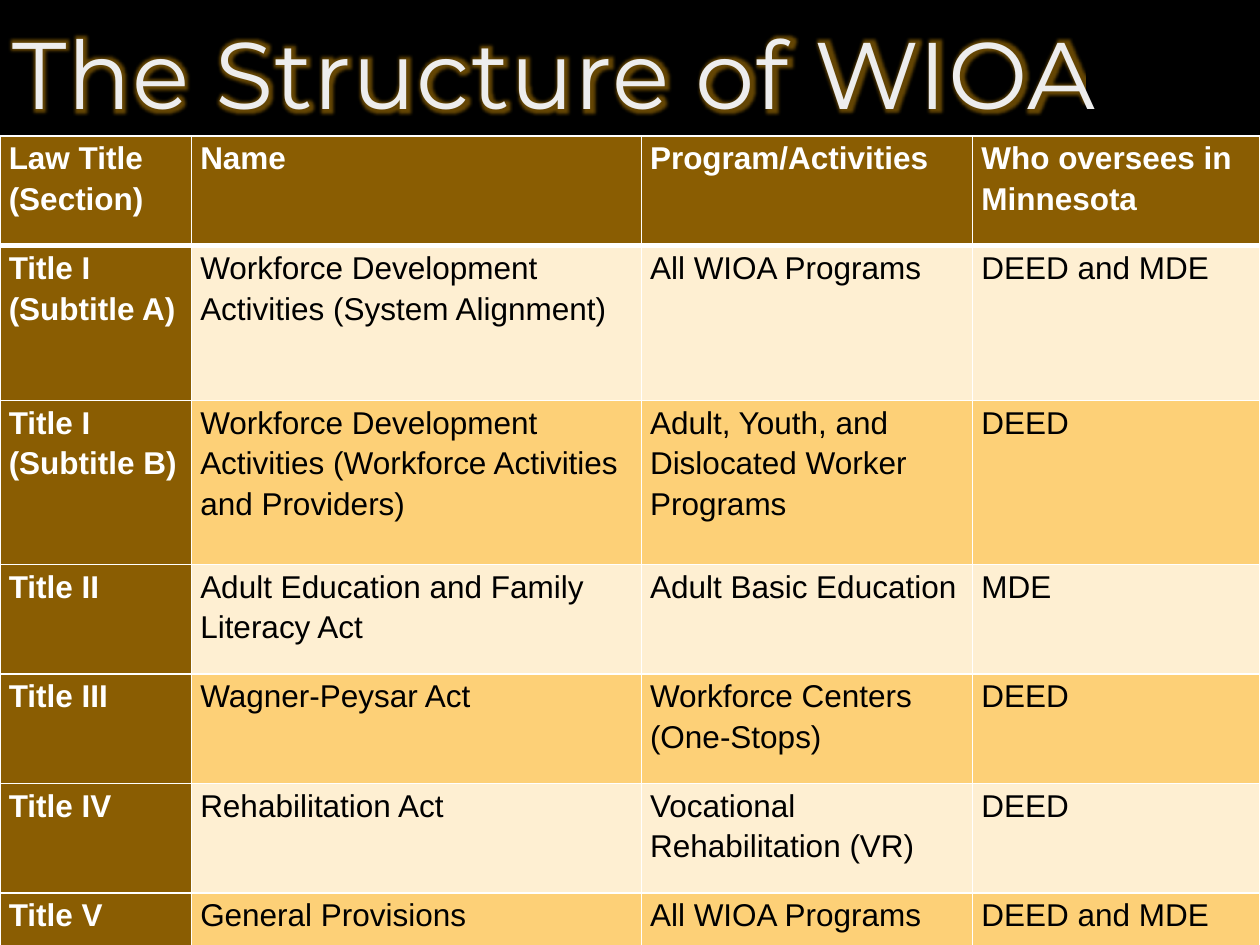
from dataclasses import dataclass

from lxml.etree import SubElement
from pptx import Presentation
from pptx.dml.color import RGBColor
from pptx.enum.text import MSO_ANCHOR, PP_ALIGN
from pptx.oxml import parse_xml
from pptx.oxml.ns import nsdecls, qn
from pptx.util import Inches, Pt


@dataclass(frozen=True)
class Theme:
    background: str = "000000"
    heading_fill: str = "8A5D02"
    light_band: str = "FEEFD2"
    dark_band: str = "FDD077"
    heading_text: str = "FFFFFF"
    body_text: str = "000000"
    border: str = "FFFFFF"
    glow: str = "FBAE09"
    title_gradient: tuple = ((0, "BFBFBF"), (28, "EDEDED"), (100, "FFFFFF"))
    title_font: str = "Montserrat"
    body_font: str = "Arial"
    title_size: int = 54
    body_size: int = 18
    thin_border: int = 1
    heavy_border: int = 3


@dataclass(frozen=True)
class LawSection:
    section: str
    name: str
    programs: str
    overseer: str
    height: float

    def texts(self) -> tuple:
        return self.section, self.name, self.programs, self.overseer


THEME = Theme()
COLUMN_WIDTHS = (1.52, 3.57, 2.63, 2.28)
SECTIONS = (
    LawSection("Law Title (Section)", "Name", "Program/Activities",
               "Who oversees in Minnesota", 0.87),
    LawSection("Title I (Subtitle A)",
               "Workforce Development Activities (System Alignment)",
               "All WIOA Programs", "DEED and MDE", 1.23),
    LawSection("Title I (Subtitle B)",
               "Workforce Development Activities (Workforce Activities and Providers)",
               "Adult, Youth, and Dislocated Worker Programs", "DEED", 1.3),
    LawSection("Title II", "Adult Education and Family Literacy Act",
               "Adult Basic Education", "MDE", 0.87),
    LawSection("Title III", "Wagner-Peysar Act",
               "Workforce Centers (One-Stops)", "DEED", 0.87),
    LawSection("Title IV", "Rehabilitation Act",
               "Vocational Rehabilitation (VR)", "DEED", 0.87),
    LawSection("Title V", "General Provisions",
               "All WIOA Programs", "DEED and MDE", 0.43),
)


def add_heading(slide, text: str) -> None:
    title = slide.shapes.title
    title.left, title.top = Inches(0), Inches(0)
    title.width, title.height = Inches(10), Inches(1.25)
    frame = title.text_frame
    frame.word_wrap = True
    frame.vertical_anchor = MSO_ANCHOR.MIDDLE
    paragraph = frame.paragraphs[0]
    paragraph.alignment = PP_ALIGN.LEFT
    paragraph.line_spacing = 0.9
    run = paragraph.add_run()
    run.text = text
    run.font.size = Pt(THEME.title_size)
    run.font.name = THEME.title_font
    properties = run.font._element
    properties.set("spc", "50")
    stops = "".join(
        f'<a:gs pos="{position * 1000}"><a:srgbClr val="{color}"/></a:gs>'
        for position, color in THEME.title_gradient)
    gradient = parse_xml(
        f'<a:gradFill {nsdecls("a")}><a:gsLst>{stops}</a:gsLst>'
        '<a:lin ang="4800000" scaled="0"/></a:gradFill>')
    glow = parse_xml(
        f'<a:effectLst {nsdecls("a")}><a:glow rad="{Pt(8)}">'
        f'<a:srgbClr val="{THEME.glow}"><a:alpha val="40000"/></a:srgbClr>'
        '</a:glow></a:effectLst>')
    properties.insert(0, gradient)
    properties.insert(1, glow)


def set_borders(cell, top: int, bottom: int) -> None:
    thin = THEME.thin_border
    properties = cell._tc.get_or_add_tcPr()
    edges = (("a:lnL", thin), ("a:lnR", thin), ("a:lnT", top), ("a:lnB", bottom))
    for index, (edge, width) in enumerate(edges):
        line = parse_xml(f'<{edge} {nsdecls("a")} w="{Pt(width)}"/>')
        fill = SubElement(line, qn("a:solidFill"))
        SubElement(fill, qn("a:srgbClr"), val=THEME.border)
        properties.insert(index, line)


def fill_cell(cell, text: str, row: int, column: int) -> None:
    is_heading = row == 0 or column == 0
    band = THEME.light_band if row % 2 else THEME.dark_band
    cell.fill.solid()
    cell.fill.fore_color.rgb = RGBColor.from_string(
        THEME.heading_fill if is_heading else band)
    cell.margin_left = cell.margin_right = Inches(0.07)
    cell.margin_top = cell.margin_bottom = Inches(0)
    cell.text = text
    paragraph = cell.text_frame.paragraphs[0]
    paragraph.line_spacing = 1.15
    font = paragraph.font
    font.name = THEME.body_font
    font.size = Pt(THEME.body_size)
    font.bold = is_heading
    font.color.rgb = RGBColor.from_string(
        THEME.heading_text if is_heading else THEME.body_text)
    set_borders(cell,
                THEME.heavy_border if row == 1 else THEME.thin_border,
                THEME.heavy_border if row == 0 else THEME.thin_border)


def add_law_table(slide, sections: tuple) -> None:
    height = sum(section.height for section in sections)
    table = slide.shapes.add_table(
        len(sections), len(COLUMN_WIDTHS),
        Inches(0), Inches(1.08), Inches(10), Inches(height)).table
    table.first_col = True
    for column, width in zip(table.columns, COLUMN_WIDTHS):
        column.width = Inches(width)
    for row, section in enumerate(sections):
        table.rows[row].height = Inches(section.height)
        for column, text in enumerate(section.texts()):
            fill_cell(table.cell(row, column), text, row, column)


def main() -> None:
    presentation = Presentation()
    presentation.slide_width = Inches(10)
    presentation.slide_height = Inches(7.5)
    slide = presentation.slides.add_slide(presentation.slide_layouts[5])
    slide.background.fill.solid()
    slide.background.fill.fore_color.rgb = RGBColor.from_string(THEME.background)
    add_heading(slide, "The Structure of WIOA")
    add_law_table(slide, SECTIONS)
    presentation.save("out.pptx")


if __name__ == "__main__":
    main()
